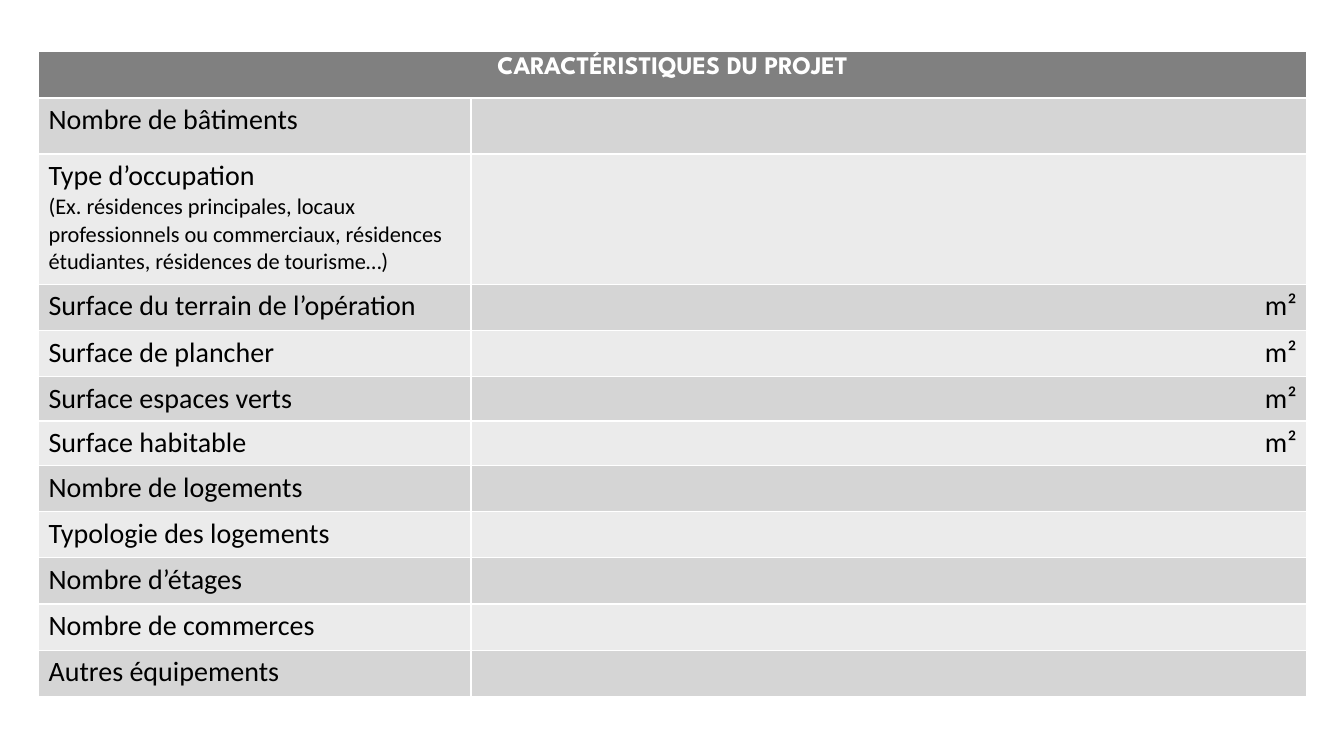
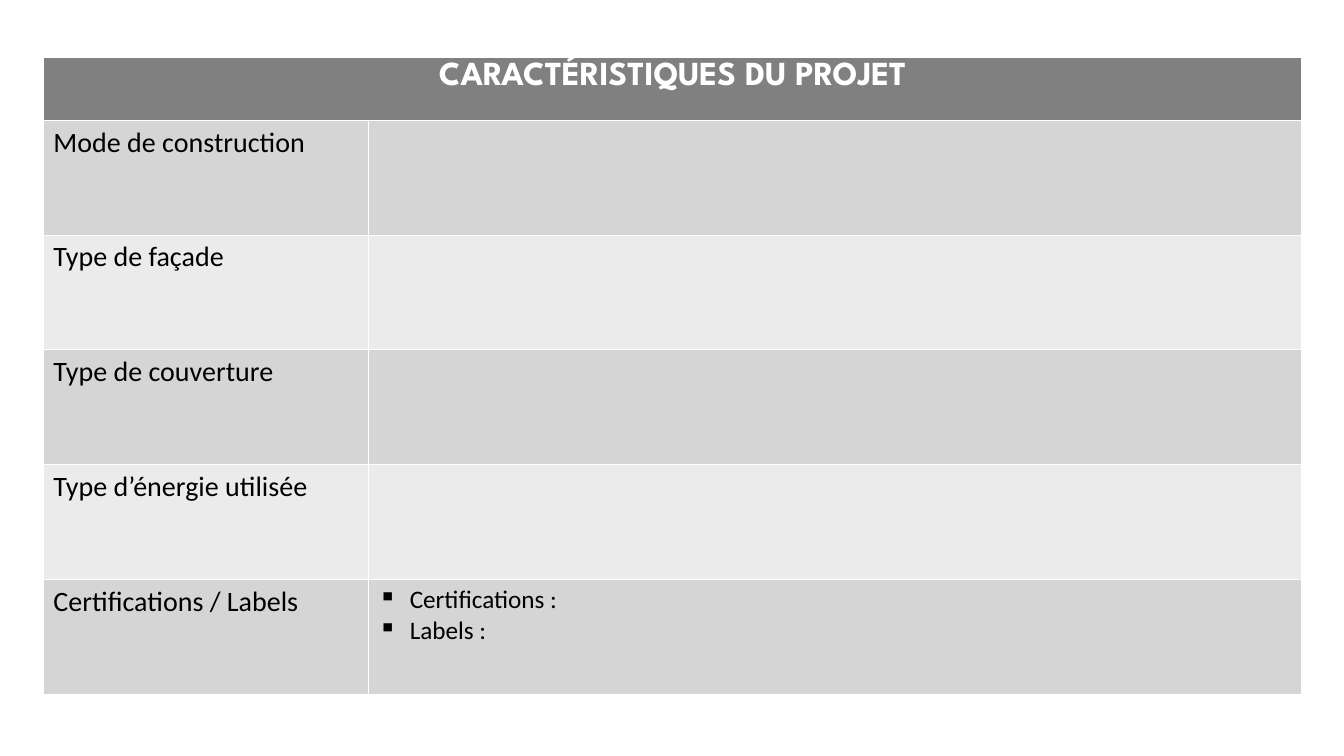
"""Build two slides of project characteristics tables."""
import pptx
import pptx.dml.color
import pptx.enum.text
import pptx.oxml
import pptx.oxml.ns
import pptx.util

Pt = pptx.util.Pt
ALIGN = pptx.enum.text.PP_ALIGN
COLORS = {"header": "808080", "dark": "D5D5D5", "light": "EBEBEB",
          "text": "000000", "header_text": "FFFFFF"}
HEADING = "CARACTÉRISTIQUES DU PROJET"
BLANK_LAYOUT = 6


def fill_cell(cell, color):
    cell.fill.solid()
    cell.fill.fore_color.rgb = pptx.dml.color.RGBColor.from_string(COLORS[color])


def write_lines(cell, lines, font="Calibri", color="text", bold=False,
                align=ALIGN.LEFT, bullet=None):
    frame = cell.text_frame
    for index, (text, size) in enumerate(lines):
        para = frame.add_paragraph() if index else frame.paragraphs[0]
        para.text = text
        para.alignment = align
        if bullet:
            properties = para._p.get_or_add_pPr()
            properties.set("marL", str(Pt(22.5)))
            properties.set("indent", str(-Pt(22.5)))
            mark = pptx.oxml.parse_xml(
                f'<a:buChar {pptx.oxml.ns.nsdecls("a")} char="{bullet}"/>')
            properties.append(mark)
        for span in para.runs:
            span.font.name = font
            span.font.size = Pt(size)
            span.font.bold = bold
            span.font.color.rgb = pptx.dml.color.RGBColor.from_string(COLORS[color])


AREA = {"lines": [("m²", 20)], "align": ALIGN.RIGHT}
OCCUPATION_NOTE = ("(Ex. résidences principales, locaux professionnels ou "
                   "commerciaux, résidences étudiantes, résidences de tourisme…)")
LABELS = {"lines": [("Certifications :", 18), ("Labels :", 18)], "bullet": "▪"}

TABLES = [
    {"left": 27.5, "top": 37, "columns": [309, 597], "header_height": 33,
     "header_size": 18,
     "rows": [
         ("Nombre de bâtiments", 40, None, None),
         ("Type d’occupation", 93, OCCUPATION_NOTE, None),
         ("Surface du terrain de l’opération", 33, None, AREA),
         ("Surface de plancher", 33, None, AREA),
         ("Surface espaces verts", 31, None, AREA),
         ("Surface habitable", 31, None, AREA),
         ("Nombre de logements", 33, None, None),
         ("Typologie des logements", 33, None, None),
         ("Nombre d’étages", 33, None, None),
         ("Nombre de commerces", 33, None, None),
         ("Autres équipements", 33, None, None),
     ]},
    {"left": 31, "top": 41, "columns": [232, 667], "header_height": 45,
     "header_size": 24,
     "rows": [
         ("Mode de construction", 82, None, None),
         ("Type de façade", 82, None, None),
         ("Type de couverture", 82, None, None),
         ("Type d’énergie utilisée", 82, None, None),
         ("Certifications / Labels", 82, None, LABELS),
     ]},
]

deck = pptx.Presentation()
deck.slide_width = Pt(960)
deck.slide_height = Pt(540)

for layout in TABLES:
    page = deck.slides.add_slide(deck.slide_layouts[BLANK_LAYOUT])
    heights = [layout["header_height"]] + [row[1] for row in layout["rows"]]
    table = page.shapes.add_table(
        len(heights), 2, Pt(layout["left"]), Pt(layout["top"]),
        Pt(sum(layout["columns"])), Pt(sum(heights))).table
    for column, width in zip(table.columns, layout["columns"]):
        column.width = Pt(width)
    for row, height in zip(table.rows, heights):
        row.height = Pt(height)

    header = table.cell(0, 0)
    header.merge(table.cell(0, 1))
    fill_cell(header, "header")
    write_lines(header, [(HEADING, layout["header_size"])], font="League Spartan",
                color="header_text", bold=True, align=ALIGN.CENTER)

    for number, (label, height, note, answer) in enumerate(layout["rows"], start=1):
        label_cell, answer_cell = table.cell(number, 0), table.cell(number, 1)
        for cell in (label_cell, answer_cell):
            fill_cell(cell, "dark" if number % 2 else "light")
        write_lines(label_cell, [(label, 20)] + ([(note, 16)] if note else []))
        if answer:
            write_lines(answer_cell, **answer)

deck.save("out.pptx")
